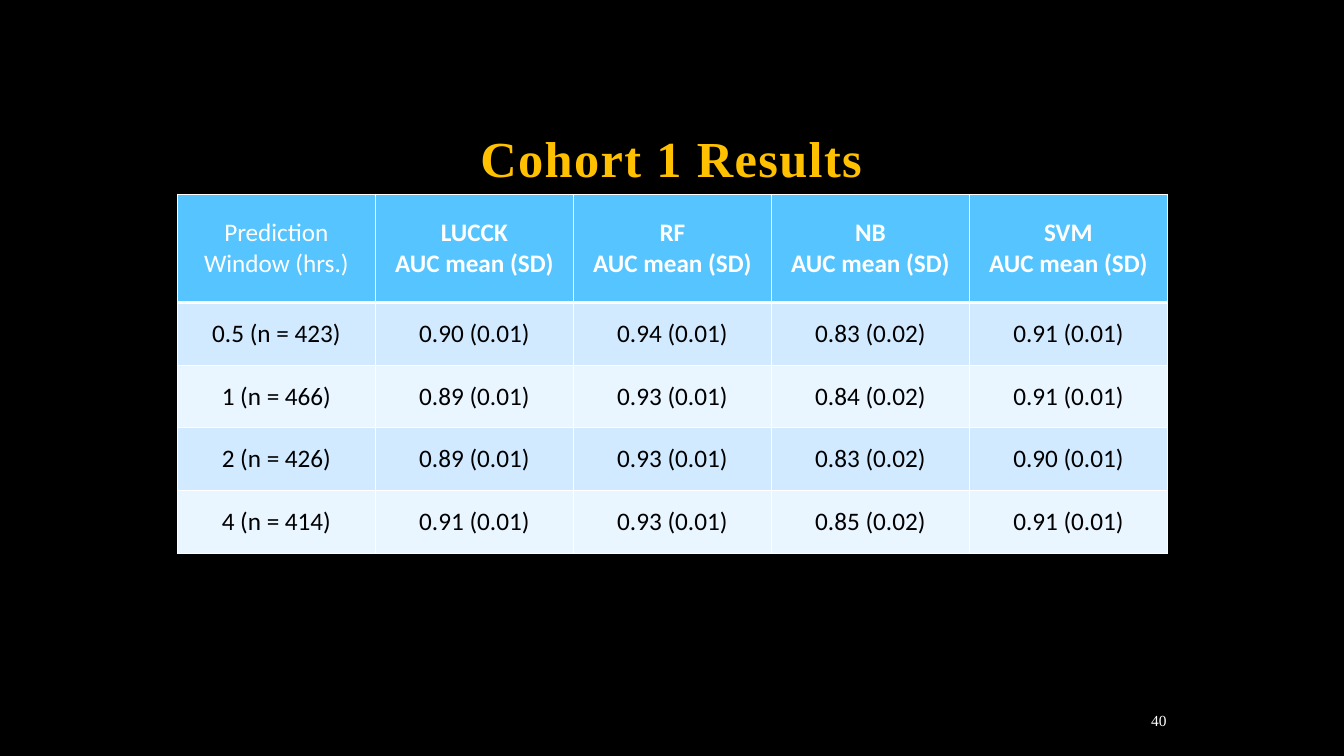
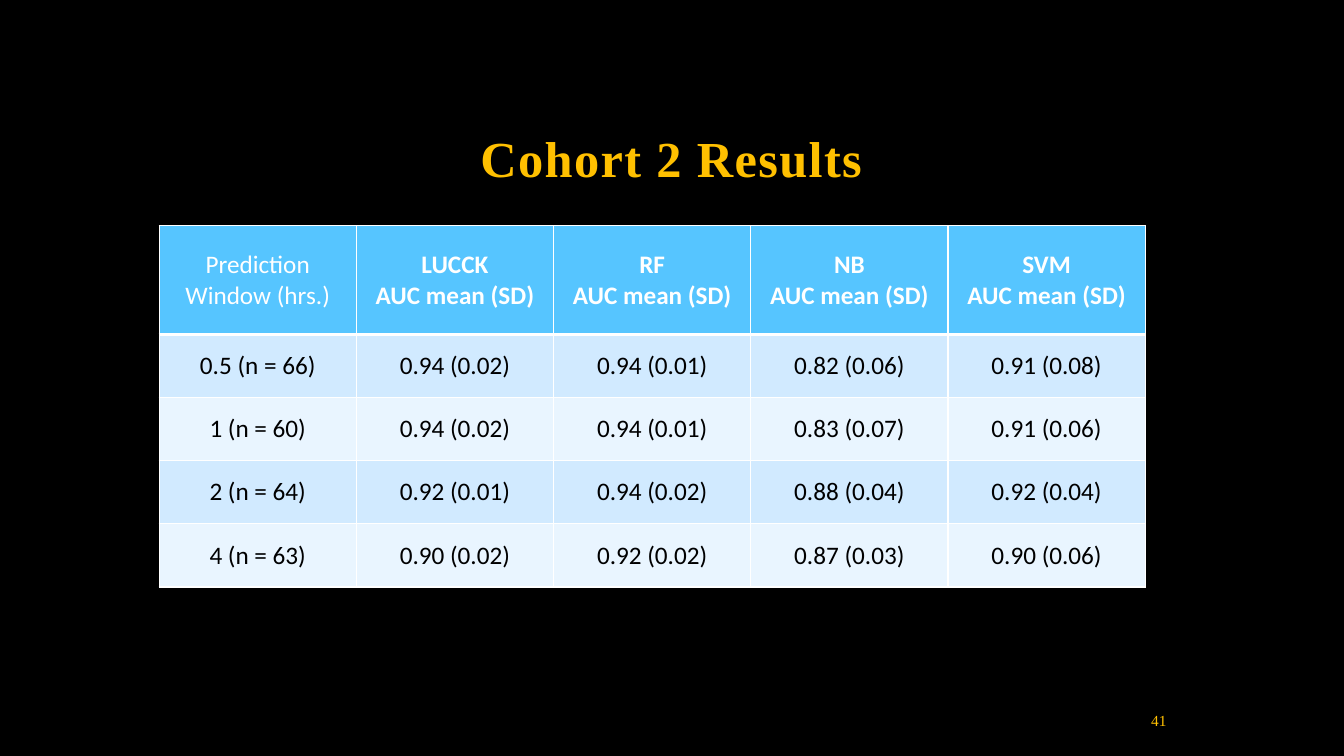
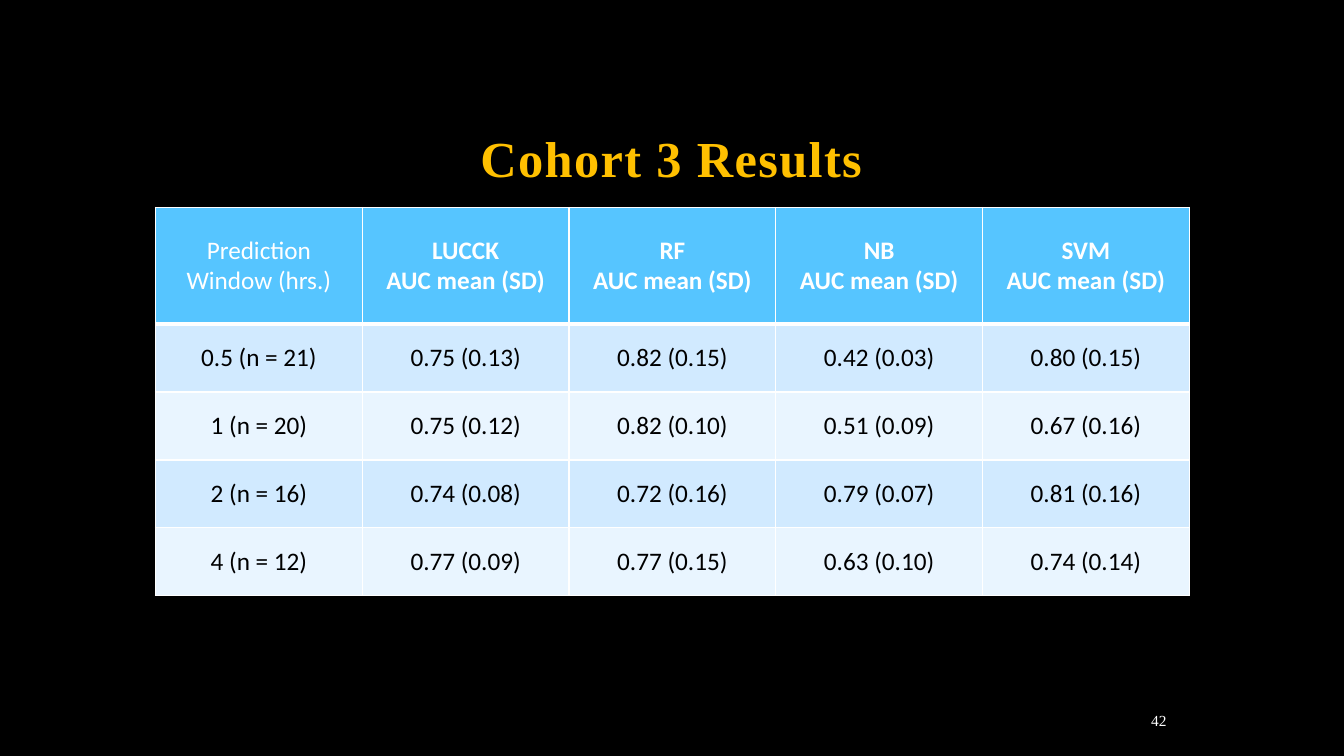
from pptx import Presentation
from pptx.dml.color import RGBColor
from pptx.enum import text
from pptx.oxml import parse_xml
from pptx.oxml.ns import nsdecls
from pptx.util import Cm, Pt

# Shared look
BLACK = RGBColor(0x00, 0x00, 0x00)
WHITE = RGBColor(0xFF, 0xFF, 0xFF)
GOLD = RGBColor(0xFF, 0xC0, 0x00)
HEADER_BLUE = RGBColor(0x56, 0xC5, 0xFF)
BAND_FILLS = (RGBColor(0xD1, 0xEA, 0xFF), RGBColor(0xE9, 0xF5, 0xFF))

TITLE_FONT = {"name": "Times New Roman", "size": Pt(36), "bold": True}
NUMBER_FONT = {"name": "Times New Roman", "size": Pt(11), "bold": False}
CELL_FONT = {"name": "Calibri", "size": Pt(18)}

TITLE_BOX = (4.22, 1.07, 25.4, 3.81)
NUMBER_BOX = (27.31, 17.78, 2.34, 0.76)
THIN, THICK = Pt(1), Pt(3)

# Content
HEADER = ["Prediction Window (hrs.)"] + [
    f"{model}\nAUC mean (SD)" for model in ("LUCCK", "RF", "NB", "SVM")
]
COHORTS = [
    {
        "title": "Cohort 1 Results", "number": "40", "number_color": WHITE,
        "left": 4.47, "top": 4.9, "column": 4.99, "header": 2.72, "row": 1.58,
        "rows": [
            ("0.5 (n = 423)", "0.90 (0.01)", "0.94 (0.01)", "0.83 (0.02)", "0.91 (0.01)"),
            ("1 (n = 466)", "0.89 (0.01)", "0.93 (0.01)", "0.84 (0.02)", "0.91 (0.01)"),
            ("2 (n = 426)", "0.89 (0.01)", "0.93 (0.01)", "0.83 (0.02)", "0.90 (0.01)"),
            ("4 (n = 414)", "0.91 (0.01)", "0.93 (0.01)", "0.85 (0.02)", "0.91 (0.01)"),
        ],
    },
    {
        "title": "Cohort 2 Results", "number": "41", "number_color": GOLD,
        "left": 4.01, "top": 5.69, "column": 4.97, "header": 2.74, "row": 1.59,
        "rows": [
            ("0.5 (n = 66)", "0.94 (0.02)", "0.94 (0.01)", "0.82 (0.06)", "0.91 (0.08)"),
            ("1 (n = 60)", "0.94 (0.02)", "0.94 (0.01)", "0.83 (0.07)", "0.91 (0.06)"),
            ("2 (n = 64)", "0.92 (0.01)", "0.94 (0.02)", "0.88 (0.04)", "0.92 (0.04)"),
            ("4 (n = 63)", "0.90 (0.02)", "0.92 (0.02)", "0.87 (0.03)", "0.90 (0.06)"),
        ],
    },
    {
        "title": "Cohort 3 Results", "number": "42", "number_color": WHITE,
        "left": 3.92, "top": 5.23, "column": 5.21, "header": 2.94, "row": 1.71,
        "rows": [
            ("0.5 (n = 21)", "0.75 (0.13)", "0.82 (0.15)", "0.42 (0.03)", "0.80 (0.15)"),
            ("1 (n = 20)", "0.75 (0.12)", "0.82 (0.10)", "0.51 (0.09)", "0.67 (0.16)"),
            ("2 (n = 16)", "0.74 (0.08)", "0.72 (0.16)", "0.79 (0.07)", "0.81 (0.16)"),
            ("4 (n = 12)", "0.77 (0.09)", "0.77 (0.15)", "0.63 (0.10)", "0.74 (0.14)"),
        ],
    },
]


def format_text(frame, font, color, alignment):
    for paragraph in frame.paragraphs:
        paragraph.alignment = alignment
        for run in paragraph.runs:
            for name, value in font.items():
                setattr(run.font, name, value)
            run.font.color.rgb = color


def set_borders(cell, top, bottom):
    # Border lines come before the fill in the cell properties
    properties = cell._tc.get_or_add_tcPr()
    widths = {"lnL": THIN, "lnR": THIN, "lnT": top, "lnB": bottom}
    for position, (tag, width) in enumerate(widths.items()):
        properties.insert(position, parse_xml(
            f'<a:{tag} {nsdecls("a")} w="{width}"><a:solidFill>'
            f'<a:srgbClr val="{WHITE}"/></a:solidFill></a:{tag}>'))


def add_title(slide, wording):
    title = slide.shapes.title
    title.left, title.top, title.width, title.height = map(Cm, TITLE_BOX)
    frame = title.text_frame
    frame.text = wording
    frame.auto_size = text.MSO_AUTO_SIZE.NONE
    frame.vertical_anchor = text.MSO_ANCHOR.BOTTOM
    format_text(frame, TITLE_FONT, GOLD, text.PP_ALIGN.CENTER)
    paragraph = frame.paragraphs[0]
    paragraph.line_spacing = 0.9
    paragraph.runs[0]._r.get_or_add_rPr().set("spc", "100")


def add_results_table(slide, cohort):
    rows = [HEADER, *cohort["rows"]]
    heights = [cohort["header"]] + [cohort["row"]] * len(cohort["rows"])
    table = slide.shapes.add_table(
        len(rows), len(HEADER), Cm(cohort["left"]), Cm(cohort["top"]),
        Cm(cohort["column"] * len(HEADER)), Cm(sum(heights))).table
    for column in table.columns:
        column.width = Cm(cohort["column"])

    for row_index, (values, height) in enumerate(zip(rows, heights)):
        table.rows[row_index].height = Cm(height)
        is_header = row_index == 0
        fill = HEADER_BLUE if is_header else BAND_FILLS[(row_index - 1) % 2]
        for column_index, value in enumerate(values):
            cell = table.cell(row_index, column_index)
            cell.text = value
            cell.vertical_anchor = text.MSO_ANCHOR.MIDDLE
            cell.fill.solid()
            cell.fill.fore_color.rgb = fill
            font = {**CELL_FONT, "bold": is_header and column_index > 0}
            format_text(cell.text_frame, font, WHITE if is_header else BLACK,
                        text.PP_ALIGN.CENTER)
            set_borders(cell, top=THICK if row_index == 1 else THIN,
                        bottom=THICK if is_header else THIN)


def add_slide_number(slide, number, color):
    frame = slide.shapes.add_textbox(*map(Cm, NUMBER_BOX)).text_frame
    frame.word_wrap = True
    frame.vertical_anchor = text.MSO_ANCHOR.MIDDLE
    frame.text = number
    format_text(frame, NUMBER_FONT, color, text.PP_ALIGN.RIGHT)


def main():
    presentation = Presentation()
    presentation.slide_width, presentation.slide_height = Cm(33.87), Cm(19.05)
    background = presentation.slide_master.background.fill
    background.solid()
    background.fore_color.rgb = BLACK
    title_only = presentation.slide_layouts.get_by_name("Title Only")

    for cohort in COHORTS:
        slide = presentation.slides.add_slide(title_only)
        add_title(slide, cohort["title"])
        add_results_table(slide, cohort)
        add_slide_number(slide, cohort["number"], cohort["number_color"])

    presentation.save("out.pptx")


if __name__ == "__main__":
    main()
